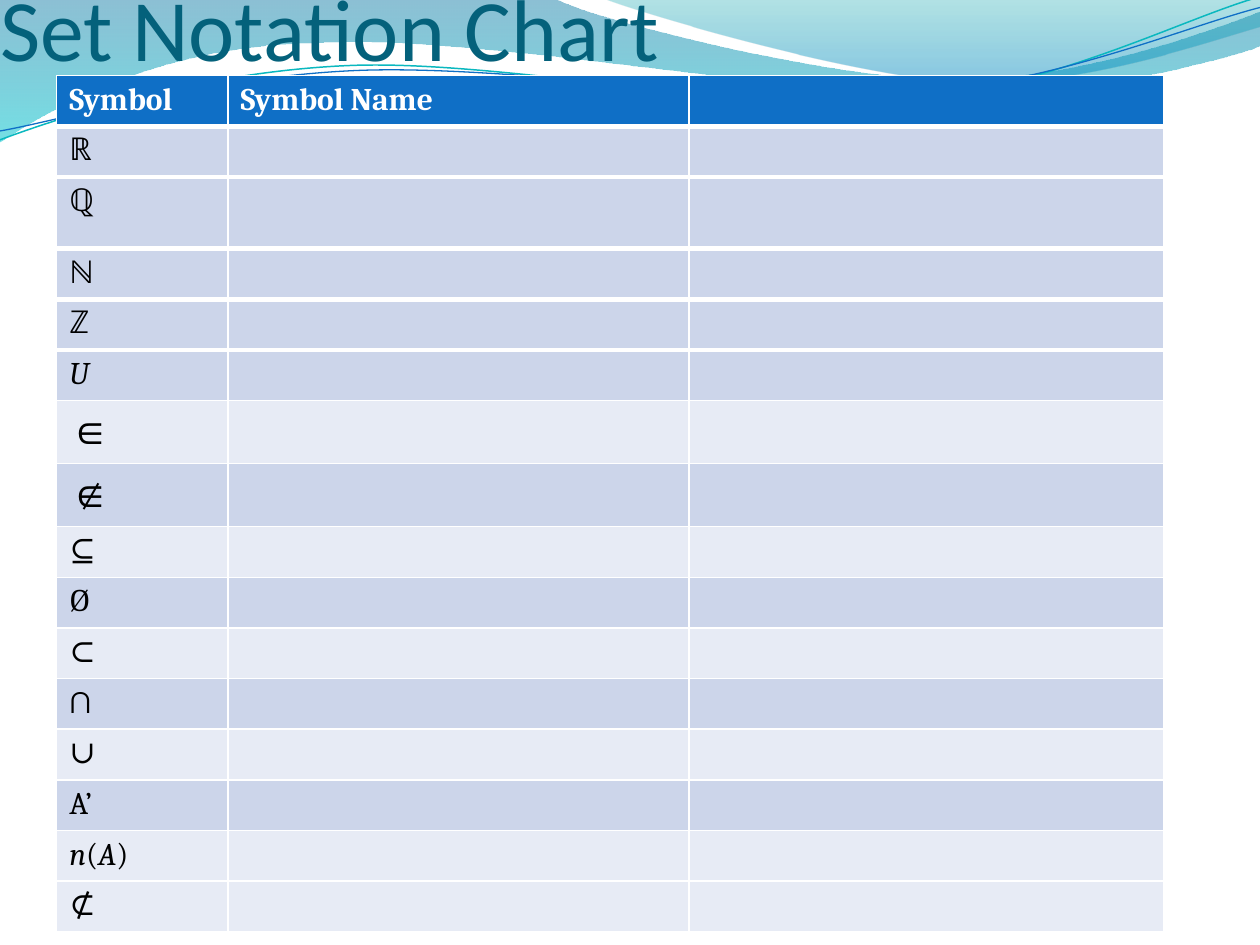
import math
from dataclasses import dataclass
from typing import Any

import pptx
import pptx.dml.color
import pptx.enum.text
import pptx.oxml
import pptx.oxml.ns
import pptx.util

Point = tuple[float, float]

deck = pptx.Presentation()
deck.slide_width, deck.slide_height = pptx.util.Inches(10), pptx.util.Inches(7.5)
GRID_COLUMNS = 10
DRAWING = pptx.oxml.ns.nsdecls("a")


@dataclass(frozen=True)
class Theme:
    title: str = "04617B"
    header: str = "0F6FC6"
    dark_band: str = "CCD5EA"
    light_band: str = "E7EBF5"
    rule: str = "FFFFFF"
    ink: str = "000000"
    teal_line: str = "0AB8BF"
    blue_line: str = "0F6FC6"
    title_font: str = "Calibri"
    table_font: str = "Cambria"
    member_font: str = "Arial"
    title_size: float = 50
    table_size: float = 18
    member_size: float = 24
    thin: float = 1
    thick: float = 3


THEME = Theme()


@dataclass(frozen=True)
class Stop:
    position: float
    color: str
    opacity: int


@dataclass(frozen=True)
class Wave:
    """An outline: each step is one point (straight) or three (Bezier)."""
    start: Point
    steps: list[tuple[Point, ...]]
    stops: tuple[Stop, ...] = ()
    line: str = ""
    width: float = 0
    center: Point = (0, 0)
    tilt: float = 0


TABLE_HEIGHT = 6.8
TALL, MEDIUM = 0.57, 0.5
PLAIN = (TABLE_HEIGHT - TALL - 2 * MEDIUM) / 13  # the other rows share the rest


@dataclass(frozen=True)
class Entry:
    """A table row; its symbol is a list of (text, italic) runs."""
    symbol: list[tuple[str, bool]]
    fill: str = THEME.dark_band
    height: float = PLAIN
    font: str = THEME.table_font
    size: float = THEME.table_size


WAVES = [
    Wave((0, -0.01), [
        ((4.4, -0.01),),
        ((4.76, 0.17), (6.64, 0.63), (7.58, 0.63)),
        ((8.53, 0.63), (9.58, 0.26), (10, 0.09)),
        ((10.01, 0.36),),
        ((9.83, 0.44), (8.7, 0.76), (7.46, 0.75)),
        ((6.22, 0.75), (3.82, 0.28), (2.57, 0.34)),
        ((1.29, 0.35), (0.46, 0.83), (-0.01, 1.13)),
        ((0, -0.01),),
    ], stops=(Stop(0, "0074A1", 45), Stop(1, "00C6CF", 55))),
    Wave((4.79, -0.01), [
        ((5.09, 0.11), (6.82, 0.62), (7.69, 0.65)),
        ((8.56, 0.69), (9.61, 0.32), (10, 0.21)),
        ((10, 0),),
        ((4.79, -0.01),),
    ], stops=(Stop(0, "00A1A9", 30), Stop(0.8, "008BBF", 45))),
    Wave((0, 1.11), [
        ((0.48, 0.93), (1.58, 0.57), (2.77, 0.52)),
        ((3.95, 0.47), (5.93, 0.89), (7.13, 0.8)),
        ((8.33, 0.71), (9.38, 0.15), (9.98, -0.02)),
    ], line=THEME.teal_line, width=0.85, center=(4.99, 0.57), tilt=-2.7),
    Wave((0, 1.04), [
        ((0.47, 0.96), (1.64, 0.61), (2.83, 0.56)),
        ((4.03, 0.51), (5.97, 0.83), (7.17, 0.75)),
        ((8.36, 0.67), (9.41, 0.21), (10, 0.06)),
    ], line=THEME.blue_line, width=0.75, center=(5, 0.59), tilt=-2.7),
]

HEADINGS = ["Symbol", "Symbol Name", ""]
COLUMN_WIDTHS = [1.36, 3.66, 3.77]
LIGHT = THEME.light_band
MEMBER = {"height": MEDIUM, "font": THEME.member_font, "size": THEME.member_size}
ENTRIES = [
    Entry([("ℝ", False)]),
    Entry([("ℚ", False)], height=TALL),
    Entry([("ℕ", False)]),
    Entry([("ℤ", False)]),
    Entry([("U", True)]),
    Entry([("∈", False)], LIGHT, **MEMBER),
    Entry([("∉", False)], **MEMBER),
    Entry([("⊆", False)], LIGHT),
    Entry([("Ø", False)]),
    Entry([("⊂", False)], LIGHT),
    Entry([("∩", False)]),
    Entry([("∪", False)], LIGHT),
    Entry([("A’", False)]),
    Entry([("n", True), ("(", False), ("A", True), (")", False)], LIGHT),
    Entry([("⊄", False)], LIGHT),
]
THICK_RULES = 5


def grid(columns: float) -> int:
    return round(deck.slide_width * columns / GRID_COLUMNS)


def rgb(color: str) -> pptx.dml.color.RGBColor:
    return pptx.dml.color.RGBColor.from_string(color)


def assign(target: Any, values: dict[str, Any]) -> None:
    for name, value in values.items():
        setattr(target, name, value)


def style_font(font: Any, color: str, **values: Any) -> None:
    assign(font, values)
    font.color.rgb = rgb(color)


def untilt(point: Point, wave: Wave) -> tuple[int, int]:
    """Place a point where the shape's own rotation brings it back."""
    angle = math.radians(-wave.tilt)
    dx, dy = point[0] - wave.center[0], point[1] - wave.center[1]
    return (grid(wave.center[0] + dx * math.cos(angle) - dy * math.sin(angle)),
            grid(wave.center[1] + dx * math.sin(angle) + dy * math.cos(angle)))


def bend(ribbon: Any, wave: Wave) -> None:
    """Join each three points of a Bezier step into one curve."""
    segments = iter(list(ribbon.element.iter(pptx.oxml.ns.qn("a:lnTo"))))
    for step in wave.steps:
        group = [next(segments) for _ in step]
        if len(group) == 3:
            curve = pptx.oxml.parse_xml(f"<a:cubicBezTo {DRAWING}/>")
            group[0].addprevious(curve)
            for segment in group:
                curve.append(segment[0])
                segment.getparent().remove(segment)


def draw_wave(shapes: Any, wave: Wave) -> None:
    builder = shapes.build_freeform(*untilt(wave.start, wave))
    builder.add_line_segments([untilt(point, wave) for step in wave.steps for point in step],
                              close=bool(wave.stops))
    ribbon = builder.convert_to_shape()
    bend(ribbon, wave)
    ribbon.rotation = wave.tilt
    ribbon.shadow.inherit = False
    if not wave.stops:
        ribbon.fill.background()
        ribbon.line.color.rgb = rgb(wave.line)
        ribbon.line.width = pptx.util.Pt(wave.width)
        return
    ribbon.line.fill.background()
    ribbon.fill.gradient()
    ribbon.fill.gradient_angle = 270
    marks = ribbon.element.iter(pptx.oxml.ns.qn("a:gs"))
    for target, stop, mark in zip(ribbon.fill.gradient_stops, wave.stops, marks):
        target.position = stop.position
        target.color.rgb = rgb(stop.color)
        mark[0].append(pptx.oxml.parse_xml(
            f'<a:alpha {DRAWING} val="{stop.opacity * 1000}"/>'))


def prepare_cell(cell: Any, fill: str, top: float, bottom: float) -> None:
    """Set the fill, the four borders and the type of the empty paragraph."""
    cell.fill.solid()
    cell.fill.fore_color.rgb = rgb(fill)
    widths = {"lnL": THEME.thin, "lnR": THEME.thin, "lnT": top, "lnB": bottom}
    properties = cell._tc.get_or_add_tcPr()
    for place, (side, width) in enumerate(widths.items()):
        properties.insert(place, pptx.oxml.parse_xml(
            f'<a:{side} {DRAWING} w="{pptx.util.Pt(width)}">'
            f'<a:solidFill><a:srgbClr val="{THEME.rule}"/></a:solidFill></a:{side}>'))
    cell.text_frame.paragraphs[0]._p.append(pptx.oxml.parse_xml(
        f'<a:endParaRPr {DRAWING} sz="{THEME.table_size * 100}">'
        f'<a:latin typeface="{THEME.table_font}"/></a:endParaRPr>'))


def write_cell(cell: Any, entry: Entry, color: str, bold: bool) -> None:
    for text, italic in entry.symbol:
        run = cell.text_frame.paragraphs[0].add_run()
        run.text = text
        style_font(run.font, color, bold=bold, italic=italic,
                   name=entry.font, size=pptx.util.Pt(entry.size))


def draw_table(shapes: Any) -> None:
    heights = [PLAIN] + [entry.height for entry in ENTRIES]
    table = shapes.add_table(len(heights), len(HEADINGS), grid(0.45), grid(0.6),
                             grid(sum(COLUMN_WIDTHS)), grid(TABLE_HEIGHT)).table
    table.horz_banding = False
    for column, width in zip(table.columns, COLUMN_WIDTHS):
        column.width = grid(width)
    for index, (row, height) in enumerate(zip(table.rows, heights)):
        row.height = grid(height)
        top = THEME.thick if 0 < index <= THICK_RULES else THEME.thin
        bottom = THEME.thick if index < THICK_RULES else THEME.thin
        for cell in row.cells:
            prepare_cell(cell, ENTRIES[index - 1].fill if index else THEME.header, top, bottom)
    for cell, heading in zip(table.rows[0].cells, HEADINGS):
        if heading:
            write_cell(cell, Entry([(heading, False)]), THEME.rule, bold=True)
    for index, entry in enumerate(ENTRIES, start=1):
        write_cell(table.cell(index, 0), entry, THEME.ink, bold=False)


def place_title(title: Any) -> None:
    title.element.getparent().append(title.element)  # in front of the waves
    assign(title, {"left": 0, "top": grid(-0.62), "width": grid(9), "height": grid(1.25)})
    title.text = "Set Notation Chart"
    assign(title.text_frame, {
        "margin_left": 0, "margin_right": 0, "margin_top": grid(0.05), "margin_bottom": 0,
        "word_wrap": True, "auto_size": pptx.enum.text.MSO_AUTO_SIZE.NONE,
        "vertical_anchor": pptx.enum.text.MSO_ANCHOR.BOTTOM})
    heading = title.text_frame.paragraphs[0]
    heading.alignment = pptx.enum.text.PP_ALIGN.LEFT
    style_font(heading.runs[0].font, THEME.title, name=THEME.title_font,
               size=pptx.util.Pt(THEME.title_size))


slide = deck.slides.add_slide(deck.slide_layouts.get_by_name("Title Only"))
for wave in WAVES:
    draw_wave(slide.shapes, wave)
place_title(slide.shapes.title)
draw_table(slide.shapes)
deck.save("out.pptx")
